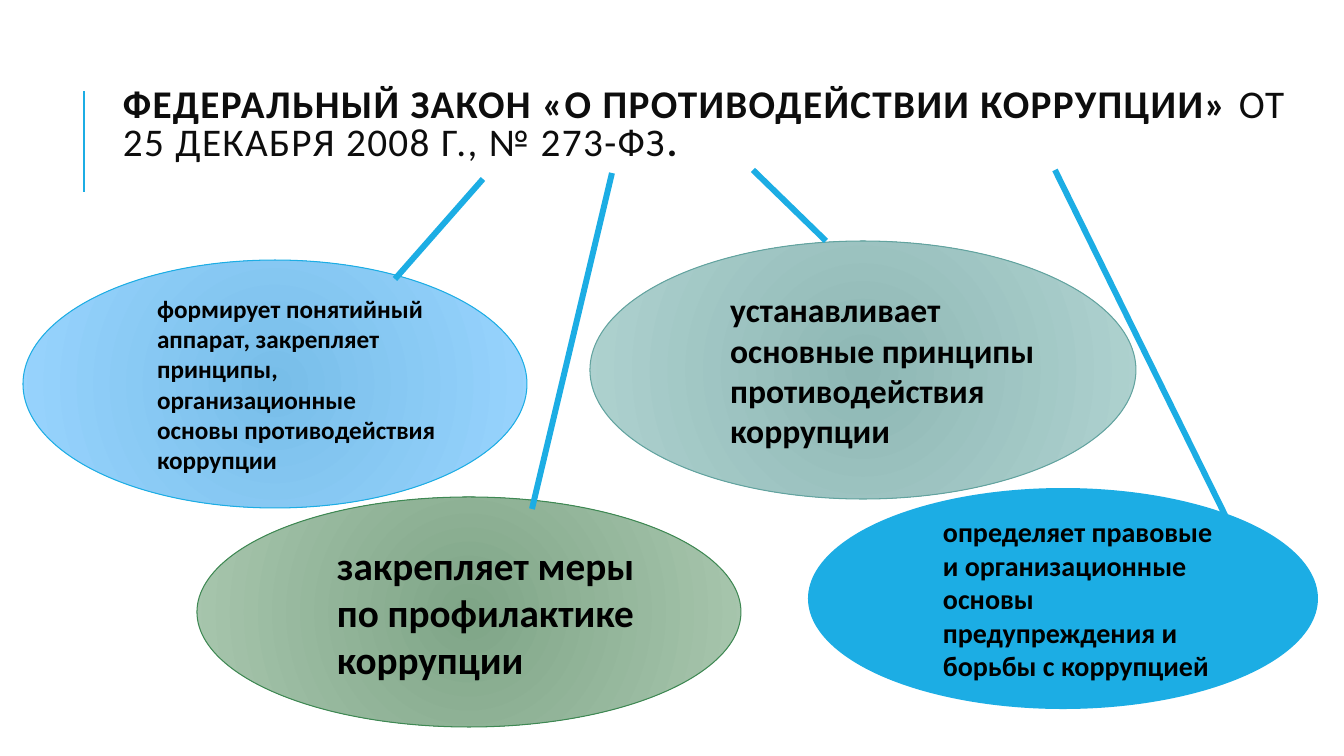
from lxml import etree
from pptx import Presentation
from pptx import util as u
from pptx.dml.color import RGBColor
from pptx.enum import shapes, text
from pptx.oxml.ns import qn

PX = 914400 / 100.8
FONT = "Calibri"
COLORS = {
    "blue": "1CADE4", "title": "0D0D0D", "black": "000000",
    "sky_in": "78BEE9", "sky_out": "9AD5FF",
    "green": "3E8853", "green_in": "7FA587", "green_out": "A9C7AF",
    "teal": "62A39F", "teal_in": "8EB7B4", "teal_out": "B0D3D1",
}


def px(n):
    return u.Emu(round(n * PX))


def rgb(name):
    return RGBColor.from_string(COLORS[name])


class LawSlide:
    """Draws styled elements on one slide, with lengths in px."""

    def __init__(self, prs):
        self.s = prs.slides.add_slide(prs.slide_layouts[6])

    def style(self, r, size, color, bold=True):
        r.font.name = FONT
        r.font.size = u.Pt(size)
        r.font.bold = bold
        r.font.color.rgb = rgb(color)

    def frame(self, sp):
        tf = sp.text_frame
        tf.word_wrap = True
        tf.vertical_anchor = text.MSO_ANCHOR.MIDDLE
        return tf

    def title(self, box, parts, size):
        tf = self.frame(self.s.shapes.add_textbox(*map(px, box)))
        p = tf.paragraphs[0]
        p.line_spacing = 0.8
        for words, bold in parts:
            r = p.add_run()
            r.text = words
            self.style(r, size, "title", bold)
            r.font._element.set("spc", "100")

    def radial(self, sp, inner, outer):
        sp.fill.gradient()
        for stop, color, position in zip(sp.fill.gradient_stops, (inner, outer), (0, 1)):
            stop.color.rgb = rgb(color)
            stop.position = position
        grad = sp._element.spPr.find(qn("a:gradFill"))
        grad.replace(grad.find(qn("a:lin")), etree.Element(qn("a:path"), path="circle"))
        etree.SubElement(grad.find(qn("a:path")), qn("a:fillToRect"),
                         dict.fromkeys("ltrb", "100000"))

    def ellipse(self, box, words, size, fill, line=None):
        sp = self.s.shapes.add_shape(shapes.MSO_SHAPE.OVAL, *map(px, box))
        sp.shadow.inherit = False
        if line:
            self.radial(sp, *fill)
            sp.line.color.rgb = rgb(line)
            sp.line.width = u.Pt(0.75)
        else:
            sp.fill.solid()
            sp.fill.fore_color.rgb = rgb(fill)
            sp.line.fill.background()
        tf = self.frame(sp)
        tf.text = words
        p = tf.paragraphs[0]
        p.level = 1
        p.alignment = text.PP_ALIGN.LEFT
        pPr = p._p.get_or_add_pPr()
        pPr.set("marL", str(u.Inches(0.5)))
        pPr.set("indent", "0")
        self.style(p.runs[0], size, "black")

    def line(self, ends, width):
        c = self.s.shapes.add_connector(shapes.MSO_CONNECTOR.STRAIGHT, *map(px, ends))
        c.line.color.rgb = rgb("blue")
        c.line.width = u.Pt(width)
        etree.SubElement(c._element.spPr, qn("a:effectLst"))


def main():
    prs = Presentation()
    prs.slide_width, prs.slide_height = px(1344), px(756)
    law = LawSlide(prs)
    law.line((84, 192, 84, 91), 1.5)
    law.title((113, 65, 1188, 122), [
        ("ФЕДЕРАЛЬНЫЙ ЗАКОН «О ПРОТИВОДЕЙСТВИИ КОРРУПЦИИ»", True),
        (" ОТ 25 ДЕКАБРЯ 2008 Г., № 273-ФЗ", False),
        (".", True),
    ], 28)
    law.ellipse((23, 260, 504, 248),
                "формирует понятийный аппарат, закрепляет принципы, "
                "организационные основы противодействия коррупции",
                18, ("sky_in", "sky_out"), "blue")
    law.ellipse((197, 497, 544, 230), "закрепляет меры по профилактике коррупции",
                28, ("green_in", "green_out"), "green")
    law.ellipse((590, 241, 546, 258),
                "устанавливает основные принципы противодействия коррупции",
                24, ("teal_in", "teal_out"), "teal")
    law.ellipse((808, 488, 510, 221),
                "определяет правовые и организационные основы "
                "предупреждения и борьбы с коррупцией", 20, "blue")
    for ends in ((483, 179, 395, 279), (753, 170, 826, 241),
                 (612, 173, 532, 509), (1055, 170, 1227, 519)):
        law.line(ends, 4.25)
    prs.save("out.pptx")


if __name__ == "__main__":
    main()
